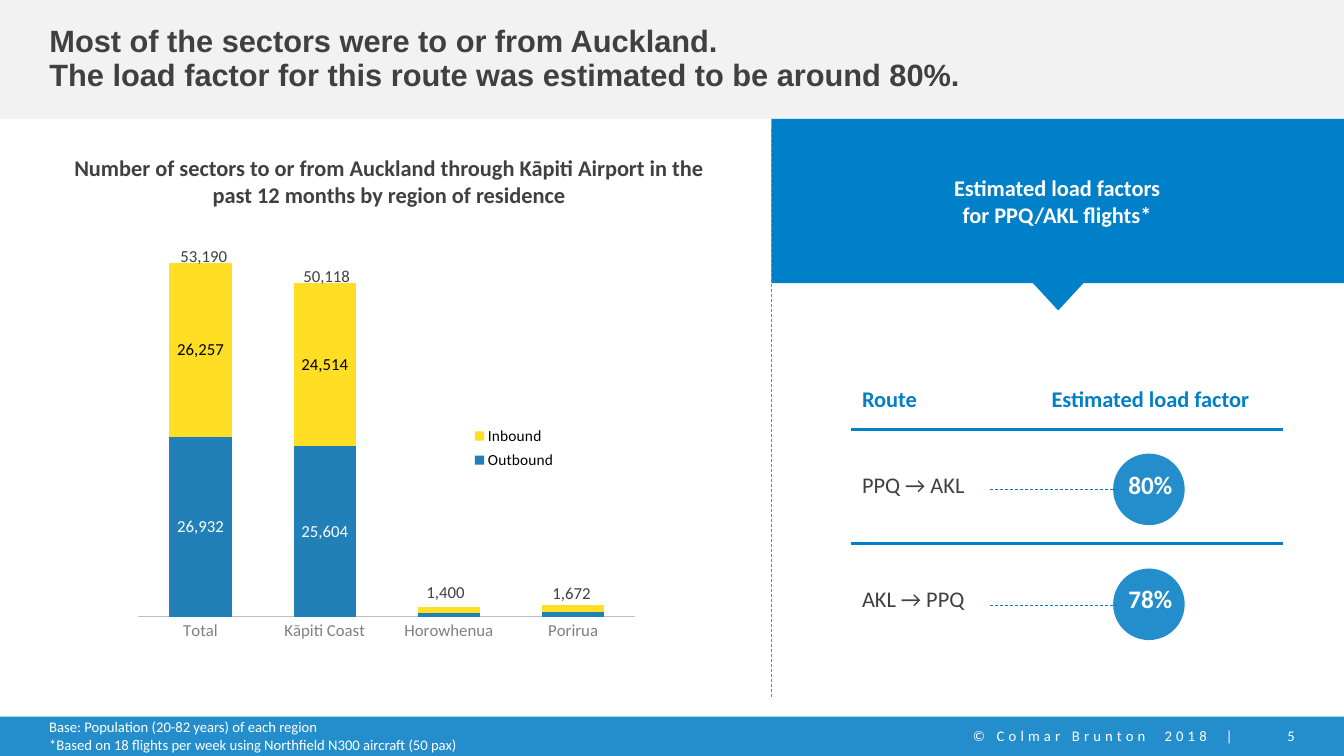
from lxml import etree
from pptx import Presentation
from pptx.chart.data import CategoryChartData
from pptx.dml.color import RGBColor
from pptx.enum.chart import XL_CHART_TYPE, XL_LABEL_POSITION, XL_LEGEND_POSITION, XL_TICK_MARK
from pptx.enum.dml import MSO_LINE
from pptx.enum.shapes import MSO_CONNECTOR, MSO_SHAPE
from pptx.enum.text import MSO_ANCHOR, MSO_AUTO_SIZE, PP_ALIGN
from pptx.oxml import parse_xml
from pptx.oxml.ns import nsdecls, qn
from pptx.util import Inches, Pt

LEFT, CENTER, RIGHT = PP_ALIGN.LEFT, PP_ALIGN.CENTER, PP_ALIGN.RIGHT
TOP, MIDDLE = MSO_ANCHOR.TOP, MSO_ANCHOR.MIDDLE
RECT, OVAL, TRIANGLE = MSO_SHAPE.RECTANGLE, MSO_SHAPE.OVAL, MSO_SHAPE.ISOSCELES_TRIANGLE

COLORS = {
    "band": "F2F2F2", "footer": "248ECC", "blue": "0080C8", "white": "FFFFFF",
    "text": "404040", "grey": "808080", "axis": "BFBFBF", "black": "000000",
    "outbound": "2080B7", "inbound": "FFDE24",
}
ROUTES = [("PPQ → AKL", "80%"), ("AKL → PPQ", "78%")]
REGIONS = ["Porirua", "Horowhenua", "Kāpiti Coast", "Total"]
SECTORS = [
    ("Outbound", [750, 579, 25604, 26932], "outbound", "white"),
    ("Inbound", [922, 821, 24514, 26257], "inbound", "black"),
]
UNLABELLED_POINTS = 2
TOTALS = [("53,190", 1.69, 2.39), ("50,118", 2.91, 2.59),
          ("1,400", 4.13, 5.72), ("1,672", 5.38, 5.73)]


def rgb(name):
    return RGBColor.from_string(COLORS[name])


def set_font(font, size, color, bold=False, name="Calibri"):
    font.name, font.size, font.bold = name, Pt(size), bold
    font.color.rgb = rgb(color)


def write(tf, lines, size, color, bold=False, align=LEFT, name="Calibri"):
    for i, line in enumerate(lines):
        p = tf.paragraphs[0] if i == 0 else tf.add_paragraph()
        p.text = line
        p.alignment = align
        set_font(p.font, size, color, bold, name)


def add_text(slide, box, lines, size, color, bold=False, align=LEFT, anchor=TOP):
    tf = slide.shapes.add_textbox(*map(Inches, box)).text_frame
    tf.word_wrap = True
    tf.vertical_anchor = anchor
    write(tf, lines, size, color, bold, align)
    return tf


def add_block(slide, kind, box, color):
    sp = slide.shapes.add_shape(kind, *map(Inches, box))
    sp.shadow.inherit = False
    sp.fill.solid()
    sp.fill.fore_color.rgb = rgb(color)
    sp.line.fill.background()
    return sp


def add_dashed_line(slide, x1, y1, x2, y2, color):
    line = slide.shapes.add_connector(MSO_CONNECTOR.STRAIGHT, *map(Inches, (x1, y1, x2, y2)))
    line.line.color.rgb = rgb(color)
    line.line.width = Pt(0.5)
    line.line.dash_style = MSO_LINE.DASH
    etree.SubElement(line._element.spPr, qn("a:effectLst"))


def add_title(slide):
    title = slide.shapes.title
    title.left, title.top, title.width, title.height = map(Inches, (0.39, 0, 10.75, 1.18))
    tf = title.text_frame
    tf.auto_size = MSO_AUTO_SIZE.NONE
    tf.vertical_anchor = MIDDLE
    write(tf, ["Most of the sectors were to or from Auckland.\v"
               "The load factor for this route was estimated to be around 80%."],
          22, "text", True, name="Arial")
    tf.paragraphs[0].line_spacing = 0.9


def add_footer(slide):
    add_text(slide, (0.39, 7.16, 8.96, 0.28),
             ["Base: Population (20-82 years) of each region",
              "*Based on 18 flights per week using Northfield N300 aircraft (50 pax)"],
             10.5, "white", anchor=MIDDLE)
    credit = add_text(slide, (9.47, 7.16, 2.86, 0.28), ["© Colmar Brunton  2018  |"],
                      10.5, "white", align=RIGHT, anchor=MIDDLE)
    number = add_text(slide, (12.34, 7.16, 0.6, 0.28), ["5"],
                      10.5, "white", align=RIGHT, anchor=MIDDLE)
    for tf in (credit, number):
        tf.paragraphs[0].runs[0]._r.get_or_add_rPr().set("spc", "300")


def add_cell_border(cell, side):
    """Draw the header rule on one side of a cell; side is lnT or lnB."""
    cell._tc.get_or_add_tcPr().insert(0, parse_xml(
        f'<a:{side} {nsdecls("a")} w="28575"><a:solidFill>'
        f'<a:srgbClr val="{COLORS["blue"]}"/></a:solidFill></a:{side}>'))


def add_route_table(slide):
    table = slide.shapes.add_table(len(ROUTES) + 1, 2, *map(Inches, (8.45, 3.67, 4.27, 2.85))).table
    table.first_row = table.horz_banding = False
    for col, width in zip(table.columns, (1.65, 2.62)):
        col.width = Inches(width)
    for row, height in zip(table.rows, (0.59, 1.13, 1.13)):
        row.height = Inches(height)
    for i, texts in enumerate([("Route", "Estimated load factor")] + ROUTES):
        for j, text in enumerate(texts):
            cell = table.cell(i, j)
            cell.vertical_anchor = MIDDLE
            if i == 0:
                cell.fill.solid()
                cell.fill.fore_color.rgb = rgb("white")
                size, color, bold = 16, "blue", True
            else:
                cell.fill.background()
                size, color, bold = (18, "white", True) if j else (16, "text", False)
            write(cell.text_frame, [text], size, color, bold, CENTER if j else LEFT)
            if i < 2:
                add_cell_border(cell, "lnT" if i else "lnB")


def place(element, x, y, w, h, inner=False):
    """Give a plot area or legend a fixed place, as fractions of the chart."""
    for old in element.findall(qn("c:layout")):
        element.remove(old)
    target = '<c:layoutTarget val="inner"/>' if inner else ""
    layout = parse_xml(
        f'<c:layout {nsdecls("c")}><c:manualLayout>{target}'
        '<c:xMode val="edge"/><c:yMode val="edge"/>'
        f'<c:x val="{x}"/><c:y val="{y}"/><c:w val="{w}"/><c:h val="{h}"/>'
        '</c:manualLayout></c:layout>')
    element.insert(0 if inner else 1, layout)


def format_series(series, fill, label_color):
    series.format.fill.solid()
    series.format.fill.fore_color.rgb = rgb(fill)
    labels = series.data_labels
    labels.show_value = True
    labels.position = XL_LABEL_POSITION.CENTER
    labels.number_format, labels.number_format_is_linked = "#,##0", False
    set_font(labels.font, 12, label_color)
    for i in range(UNLABELLED_POINTS):
        labels._element.insert(i, parse_xml(
            f'<c:dLbl {nsdecls("c")}><c:idx val="{i}"/><c:delete val="1"/></c:dLbl>'))


def add_sector_chart(slide):
    data = CategoryChartData(number_format="#,##0")
    data.categories = REGIONS
    for name, values, _, _ in SECTORS:
        data.add_series(name, values)
    chart = slide.shapes.add_chart(XL_CHART_TYPE.COLUMN_STACKED,
                                   *map(Inches, (1.25, 2.07, 6.16, 4.4)), data).chart
    set_font(chart.font, 10, "black")
    chart.has_title = False
    plot = chart.plots[0]
    plot.gap_width, plot.overlap, plot.vary_by_categories = 100, 100, False
    for series, (_, _, fill, label_color) in zip(plot.series, SECTORS):
        format_series(series, fill, label_color)

    axis = chart.category_axis
    axis.reverse_order = True
    axis.major_tick_mark = XL_TICK_MARK.NONE
    axis.format.line.color.rgb = rgb("axis")
    axis.format.line.width = Pt(0.75)
    set_font(axis.tick_labels.font, 12, "grey")
    values = chart.value_axis
    values.visible = values.has_major_gridlines = False
    values.minimum_scale, values.maximum_scale = 0, 60000

    chart.has_legend = True
    chart.legend.position = XL_LEGEND_POSITION.RIGHT
    chart.legend.include_in_layout = False
    set_font(chart.legend.font, 11, "black")
    place(chart.legend._element, 0.55, 0.48, 0.15, 0.12)
    place(chart._chartSpace.chart.plotArea, 0.02, 0.02, 0.8, 0.9, inner=True)


def main():
    prs = Presentation()
    prs.slide_width, prs.slide_height = Inches(13.33), Inches(7.5)
    slide = prs.slides.add_slide(prs.slide_layouts[5])

    add_block(slide, RECT, (0, 0, 13.33, 1.18), "band")
    add_block(slide, RECT, (0, 7.11, 13.33, 0.39), "footer")
    add_block(slide, RECT, (7.65, 1.18, 5.68, 1.63), "blue")
    for top in (4.5, 5.64):
        add_block(slide, OVAL, (11.04, top, 0.71, 0.71), "footer")
    title = slide.shapes.title._element
    title.getparent().append(title)
    add_title(slide)
    add_footer(slide)
    add_text(slide, (0.56, 1.48, 6.6, 0.64),
             ["Number of sectors to or from Auckland through Kāpiti Airport in the "
              "past 12 months by region of residence"], 16, "text", True, CENTER)
    add_route_table(slide)
    add_text(slide, (9.28, 1.68, 2.41, 0.64),
             ["Estimated load factors for PPQ/AKL flights*"], 16, "white", True, CENTER)
    add_dashed_line(slide, 7.65, 1.28, 7.65, 6.91, "grey")
    for y in (4.85, 6.01):
        add_dashed_line(slide, 9.82, y, 11.11, y, "blue")
    add_block(slide, TRIANGLE, (10.2, 2.76, 0.59, 0.32), "blue").rotation = 180
    add_sector_chart(slide)
    for total, left, top in TOTALS:
        add_text(slide, (left, top, 0.75, 0.3), [total], 12, "text")
    prs.save("out.pptx")


if __name__ == "__main__":
    main()
